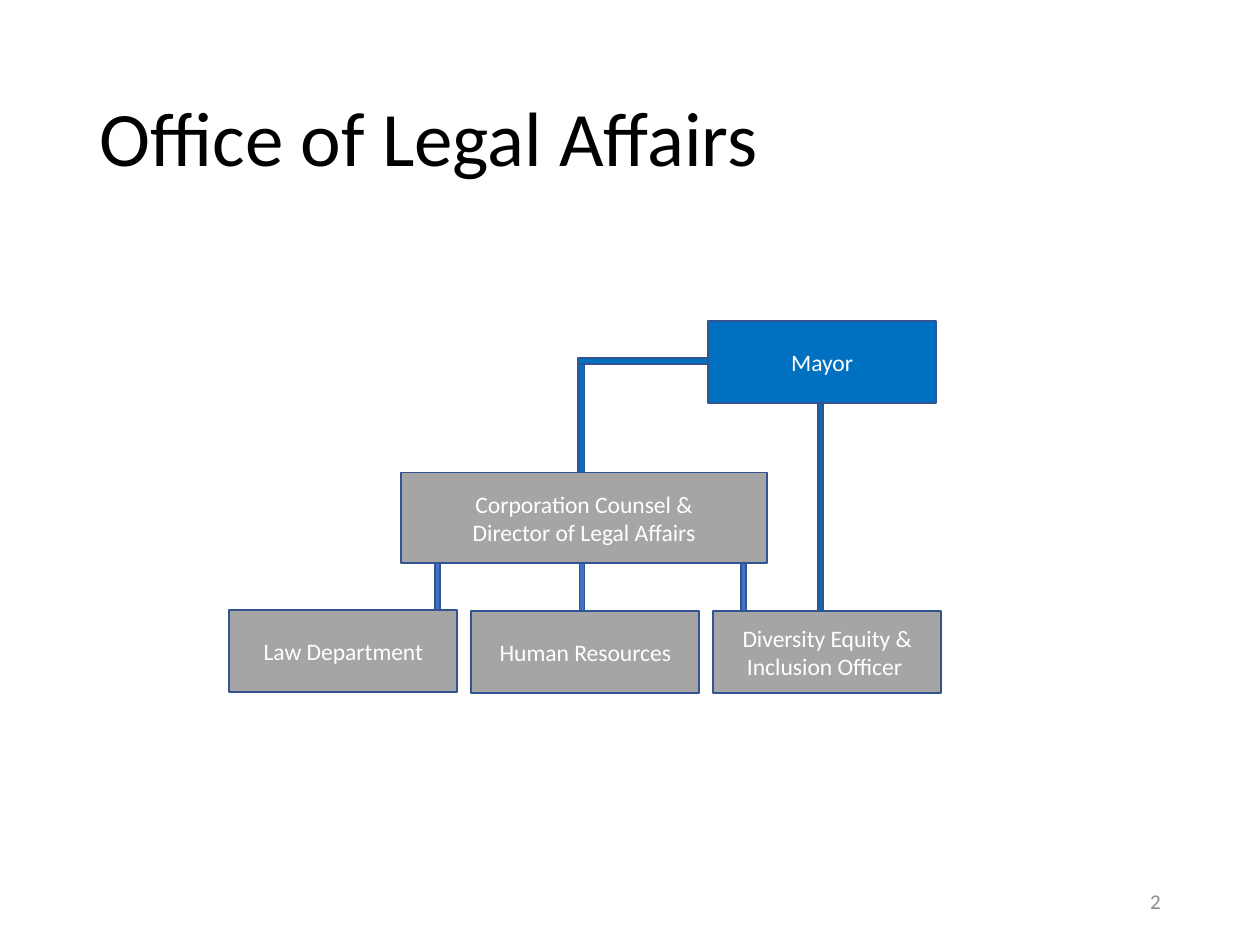
import pptx
import pptx.util
import pptx.dml.color
import pptx.enum.shapes
import pptx.enum.text

Inches = pptx.util.Inches
Align = pptx.enum.text.PP_ALIGN
COLORS = {
    "mayor": "0070C0", "office": "A5A5A5", "link": "4472C4", "outline": "325491",
    "title": "000000", "label": "FFFFFF", "number": "8C8C8C",
}


class OrgChart:
    """Draws the text, boxes and link bars of an organisation chart."""

    font = "Calibri"

    def __init__(self, slide):
        self.slide = slide

    def color(self, name):
        return pptx.dml.color.RGBColor.from_string(COLORS[name])

    def fill_text(self, frame, lines, size, color, align):
        frame.word_wrap = True
        frame.vertical_anchor = pptx.enum.text.MSO_ANCHOR.MIDDLE
        frame.text = "\n".join(lines)
        for paragraph in frame.paragraphs:
            paragraph.alignment = align
            paragraph.font.name = self.font
            paragraph.font.size = pptx.util.Pt(size)
            paragraph.font.color.rgb = self.color(color)

    def text(self, words, left, top, width, height, size, color, align):
        area = self.slide.shapes.add_textbox(*map(Inches, (left, top, width, height)))
        self.fill_text(area.text_frame, [words], size, color, align)
        return area.text_frame

    def bar(self, left, top, width, height, fill):
        bar = self.slide.shapes.add_shape(
            pptx.enum.shapes.MSO_SHAPE.RECTANGLE, *map(Inches, (left, top, width, height)))
        bar.shadow.inherit = False
        bar.fill.solid()
        bar.fill.fore_color.rgb = self.color(fill)
        bar.line.color.rgb = self.color("outline")
        bar.line.width = pptx.util.Pt(1)
        return bar

    def box(self, lines, left, top, width=1.81, height=0.65, fill="office"):
        frame = self.bar(left, top, width, height, fill).text_frame
        frame.margin_left = frame.margin_right = Inches(0.07)
        frame.margin_top = frame.margin_bottom = Inches(0.04)
        self.fill_text(frame, lines, 13.5, "label", Align.CENTER)


def main():
    deck = pptx.Presentation()
    deck.slide_width, deck.slide_height = Inches(10), Inches(7.5)
    chart = OrgChart(deck.slides.add_slide(deck.slide_layouts[6]))

    title = chart.text("Office of Legal Affairs", 0.69, 0.4, 8.62, 1.45, 44, "title", Align.LEFT)
    title.paragraphs[0].line_spacing = 0.9
    chart.text("2", 7.06, 6.95, 2.25, 0.4, 12, "number", Align.RIGHT)

    for left in (3.45, 4.6, 5.88):
        chart.bar(left, 4.47, 0.04, 0.38, "link")
    chart.box(["Law Department"], 1.82, 4.84)
    chart.box(["Human Resources"], 3.74, 4.85)
    chart.box(["Corporation Counsel &", "Director of Legal Affairs"], 3.18, 3.75, 2.91, 0.72)
    chart.box(["Diversity Equity & Inclusion Officer "], 5.66, 4.85)

    chart.bar(6.49, 3.06, 0.04, 1.79, "mayor")
    chart.box(["Mayor"], 5.62, 2.55, fill="mayor")
    chart.bar(4.59, 2.89, 0.05, 0.86, "mayor")
    chart.bar(4.59, 2.84, 1.03, 0.05, "mayor")
    deck.save("out.pptx")


if __name__ == "__main__":
    main()
